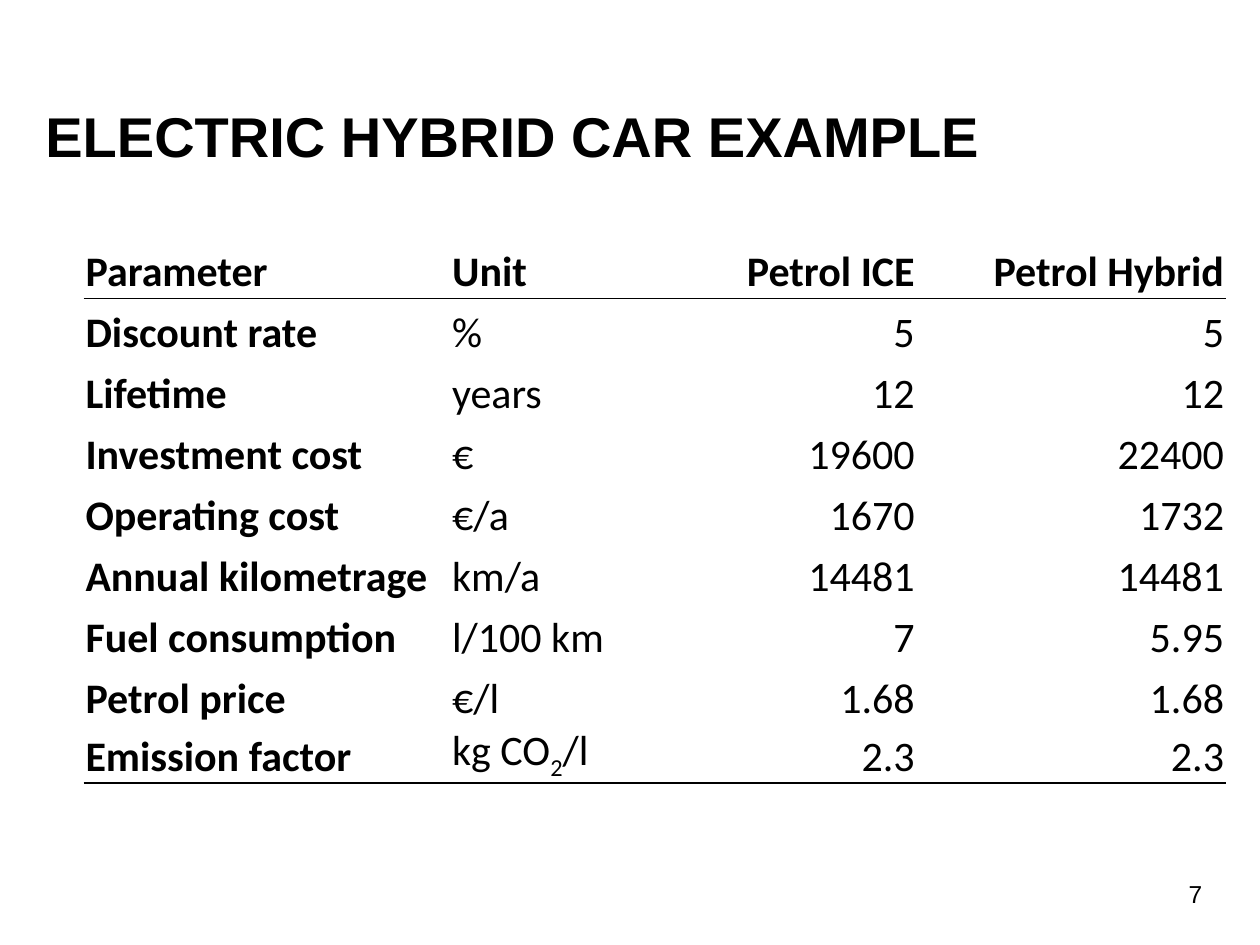
from lxml import etree
from pptx import Presentation
from pptx import util as u
from pptx.dml.color import RGBColor
from pptx.enum import text
from pptx.oxml.ns import qn

BLACK = "000000"
WHITE = "FFFFFF"
LEFT = text.PP_ALIGN.LEFT
RIGHT = text.PP_ALIGN.RIGHT
COLUMN_WIDTHS = (209.5, 108, 157.7, 176.8)
HEADER_HEIGHT, ROW_HEIGHT, LAST_HEIGHT = 36.5, 34.8, 31.7
ROWS = (
    ("Parameter", "Unit", "Petrol ICE", "Petrol Hybrid"),
    ("Discount rate", "%", "5", "5"),
    ("Lifetime", "years", "12", "12"),
    ("Investment cost", "€", "19600", "22400"),
    ("Operating cost", "€/a", "1670", "1732"),
    ("Annual kilometrage", "km/a", "14481", "14481"),
    ("Fuel consumption", "l/100 km", "7", "5.95"),
    ("Petrol price", "€/l", "1.68", "1.68"),
    ("Emission factor", ("kg CO", "2", "/l"), "2.3", "2.3"),
)


def color(value):
    return RGBColor.from_string(value)


def set_values(target, values):
    for name, value in values.items():
        setattr(target, name, value)


def write(paragraph, parts, alignment, font):
    paragraph.alignment = alignment
    parts = (parts,) if isinstance(parts, str) else parts
    for index, part in enumerate(parts):
        run = paragraph.add_run()
        run.text = part
        set_values(run.font, font)
        run.font.color.rgb = color(BLACK)
        if index == 1:
            run.font._element.set("baseline", "-25000")


def add_text(slide, box, content, alignment, font, frame):
    shape = slide.shapes.add_textbox(*map(u.Pt, box))
    set_values(shape.text_frame, {"word_wrap": True, **frame})
    write(shape.text_frame.paragraphs[0], content, alignment, font)


def add_border(cell, side):
    line = etree.Element(qn(f"a:{side}"), w=str(u.Pt(1)))
    fill = etree.SubElement(line, qn("a:solidFill"))
    etree.SubElement(fill, qn("a:srgbClr"), val=BLACK)
    cell._tc.get_or_add_tcPr().insert(0, line)


def fill_cell(cell, content, row, column):
    cell.fill.solid()
    cell.fill.fore_color.rgb = color(WHITE)
    set_values(cell, {
        "vertical_anchor": text.MSO_ANCHOR.BOTTOM,
        "margin_left": u.Pt(0.7),
        "margin_right": u.Pt(0.7),
        "margin_top": u.Pt(0.7),
        "margin_bottom": 0,
    })
    font = {"name": "Calibri", "size": u.Pt(24), "bold": row == 0 or column == 0}
    alignment = RIGHT if column >= 2 else LEFT
    write(cell.text_frame.paragraphs[0], content, alignment, font)
    if row in (0, len(ROWS) - 1):
        add_border(cell, "lnB")
    elif row == 1:
        add_border(cell, "lnT")


def add_parameter_table(slide, left, top):
    heights = [HEADER_HEIGHT] + [ROW_HEIGHT] * (len(ROWS) - 2) + [LAST_HEIGHT]
    box = (left, top, sum(COLUMN_WIDTHS), sum(heights))
    table = slide.shapes.add_table(
        len(ROWS), len(COLUMN_WIDTHS), *map(u.Pt, box)).table
    set_values(table, {"first_row": False, "horz_banding": False})
    for column, width in zip(table.columns, COLUMN_WIDTHS):
        column.width = u.Pt(width)
    for row, height in zip(table.rows, heights):
        row.height = u.Pt(height)
    for row, contents in enumerate(ROWS):
        for column, content in enumerate(contents):
            fill_cell(table.cell(row, column), content, row, column)


def main():
    presentation = Presentation()
    set_values(presentation, {"slide_width": u.Pt(720), "slide_height": u.Pt(540)})
    slide = presentation.slides.add_slide(presentation.slide_layouts[6])
    add_text(slide, (26, 54.7, 668, 57), "ELECTRIC HYBRID CAR EXAMPLE", LEFT,
             {"name": "Arial", "size": u.Pt(32), "bold": True},
             {"margin_left": 0, "margin_right": 0,
              "margin_top": u.Pt(3.5), "margin_bottom": 0})
    add_parameter_table(slide, 48.2, 134)
    add_text(slide, (615, 499, 79, 37.5), "7", RIGHT,
             {"name": "Arial", "size": u.Pt(14)}, {})
    presentation.save("out.pptx")


if __name__ == "__main__":
    main()
